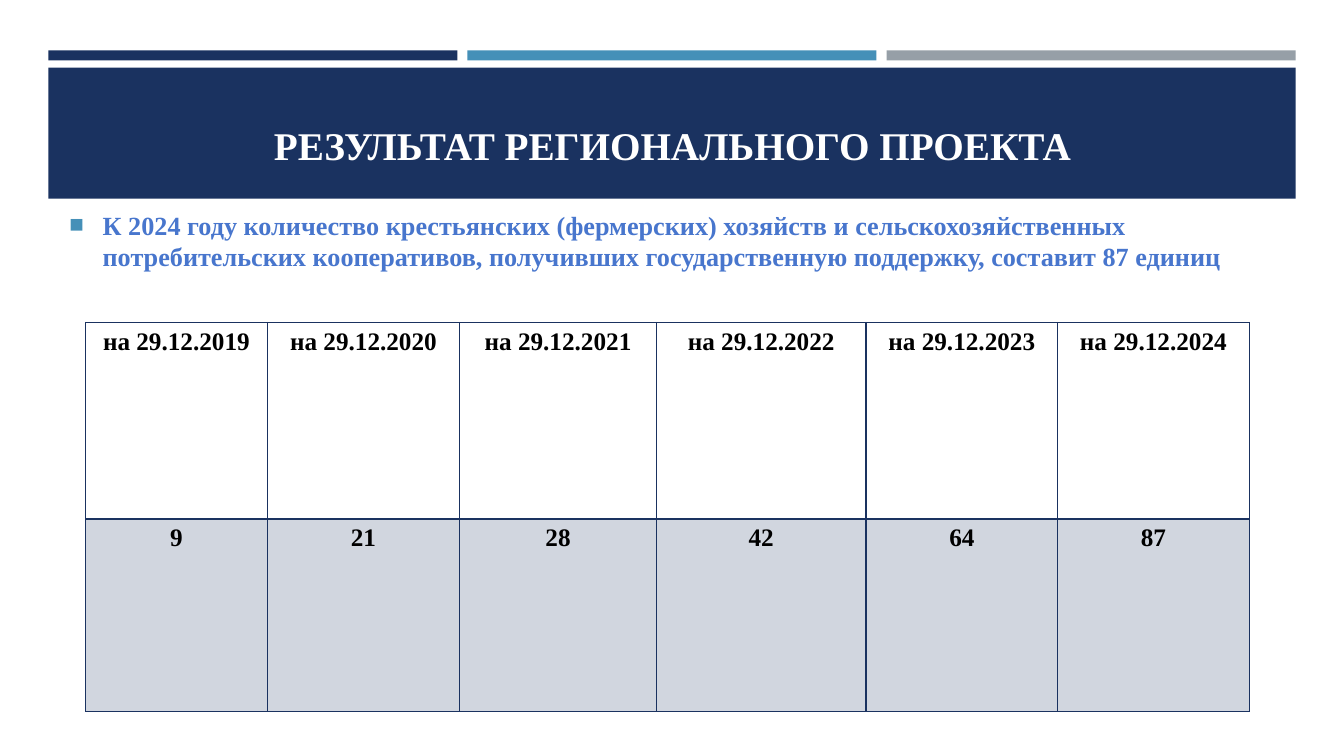
from lxml.etree import SubElement
from pptx import Presentation
from pptx.dml.color import RGBColor
from pptx.enum.shapes import MSO_SHAPE
from pptx.enum.text import MSO_ANCHOR, PP_ALIGN
from pptx.oxml.ns import qn
from pptx.util import Inches, Pt

NAVY = RGBColor(0x1A, 0x32, 0x60)
BLUE = RGBColor(0x45, 0x90, 0xB8)
GRAY = RGBColor(0x96, 0x9F, 0xA7)
TEXT_BLUE = RGBColor(0x48, 0x76, 0xCD)
WHITE = RGBColor(0xFF, 0xFF, 0xFF)
BLACK = RGBColor(0x00, 0x00, 0x00)
FONT = "Times New Roman"

TITLE = "РЕЗУЛЬТАТ РЕГИОНАЛЬНОГО ПРОЕКТА"
GOAL = ("К 2024 году количество крестьянских (фермерских) хозяйств и "
        "сельскохозяйственных потребительских кооперативов, получивших "
        "государственную поддержку, составит 87 единиц")
RESULTS = {2019: 9, 2020: 21, 2021: 28, 2022: 42, 2023: 64, 2024: 87}
COLUMN_WIDTHS = [1.8, 1.91, 1.95, 2.08, 1.9, 1.9]
ROW_HEIGHTS = [1.95, 1.91]


def add_block(slide, left, top, width, height, color):
    block = slide.shapes.add_shape(MSO_SHAPE.RECTANGLE, Inches(left), Inches(top),
                                   Inches(width), Inches(height))
    block.shadow.inherit = False
    block.fill.solid()
    block.fill.fore_color.rgb = color
    block.line.fill.background()


def add_text(slide, left, top, width, height, text, anchor):
    frame = slide.shapes.add_textbox(Inches(left), Inches(top),
                                     Inches(width), Inches(height)).text_frame
    frame.word_wrap = True
    frame.vertical_anchor = anchor
    frame.text = text
    return frame


def style_text(paragraph, size, color):
    font = paragraph.runs[0].font
    font.name, font.size, font.bold = FONT, Pt(size), True
    font.color.rgb = color


def add_header(slide, left, top, width):
    # Three accent bars over the title band
    gap = 0.1
    bar_width = (width - 2 * gap) / 3
    for i, color in enumerate((NAVY, BLUE, GRAY)):
        add_block(slide, left + i * (bar_width + gap), top, bar_width, 0.1, color)
    add_block(slide, left, top + 0.17, width, 1.3, NAVY)

    # Title
    title = add_text(slide, left + 0.16, top + 0.11, width - 0.31, 1.11,
                     TITLE, MSO_ANCHOR.BOTTOM).paragraphs[0]
    title.alignment = PP_ALIGN.CENTER
    style_text(title, 28, WHITE)


def add_goal(slide, left, top, width, height):
    frame = add_text(slide, left, top, width, height, GOAL, MSO_ANCHOR.MIDDLE)
    frame.margin_top, frame.margin_bottom = 0, Inches(0.3)
    goal = frame.paragraphs[0]
    style_text(goal, 18.7, TEXT_BLUE)

    # Square bullet with a hanging indent
    properties = goal._p.get_or_add_pPr()
    properties.set("marL", str(Inches(0.33)))
    properties.set("indent", str(-Inches(0.33)))
    bullet_color = SubElement(properties, qn("a:buClr"))
    SubElement(bullet_color, qn("a:srgbClr"), val=str(BLUE))
    SubElement(properties, qn("a:buSzPct"), val="92000")
    SubElement(properties, qn("a:buFont"), typeface="Arial")
    SubElement(properties, qn("a:buChar"), char="■")


def set_borders(cell, bottom_width):
    properties = cell._tc.get_or_add_tcPr()
    for side, width in (("L", 1), ("R", 1), ("T", 1), ("B", bottom_width)):
        line = SubElement(properties, qn(f"a:ln{side}"), w=str(Pt(width)))
        fill = SubElement(line, qn("a:solidFill"))
        SubElement(fill, qn("a:srgbClr"), val=str(NAVY))


def fill_cell(cell, text, is_header):
    cell.text = text
    paragraph = cell.text_frame.paragraphs[0]
    paragraph.alignment = PP_ALIGN.CENTER
    style_text(paragraph, 18, BLACK)
    set_borders(cell, 2 if is_header else 1)
    if is_header:
        cell.fill.background()
        return
    # Values stand on a navy tint of 20 % opacity
    cell.fill.solid()
    cell.fill.fore_color.rgb = NAVY
    tint = cell._tc.tcPr.find(qn("a:solidFill")).find(qn("a:srgbClr"))
    SubElement(tint, qn("a:alpha"), val="20000")


def add_results(slide, left, top):
    table = slide.shapes.add_table(
        len(ROW_HEIGHTS), len(COLUMN_WIDTHS), Inches(left), Inches(top),
        Inches(sum(COLUMN_WIDTHS)), Inches(sum(ROW_HEIGHTS))).table
    table.first_row = table.horz_banding = False
    for row, height in zip(table.rows, ROW_HEIGHTS):
        row.height = Inches(height)
    for column, width in zip(table.columns, COLUMN_WIDTHS):
        column.width = Inches(width)
    for i, (year, count) in enumerate(RESULTS.items()):
        fill_cell(table.cell(0, i), f"на 29.12.{year}", True)
        fill_cell(table.cell(1, i), str(count), False)


def main():
    presentation = Presentation()
    presentation.slide_width = Inches(13.33)
    presentation.slide_height = Inches(7.5)
    slide = presentation.slides.add_slide(presentation.slide_layouts[6])
    add_header(slide, 0.48, 0.5, 12.37)
    add_goal(slide, 0.59, 2.13, 12.06, 0.81)
    add_results(slide, 0.85, 3.2)
    presentation.save("out.pptx")


if __name__ == "__main__":
    main()
